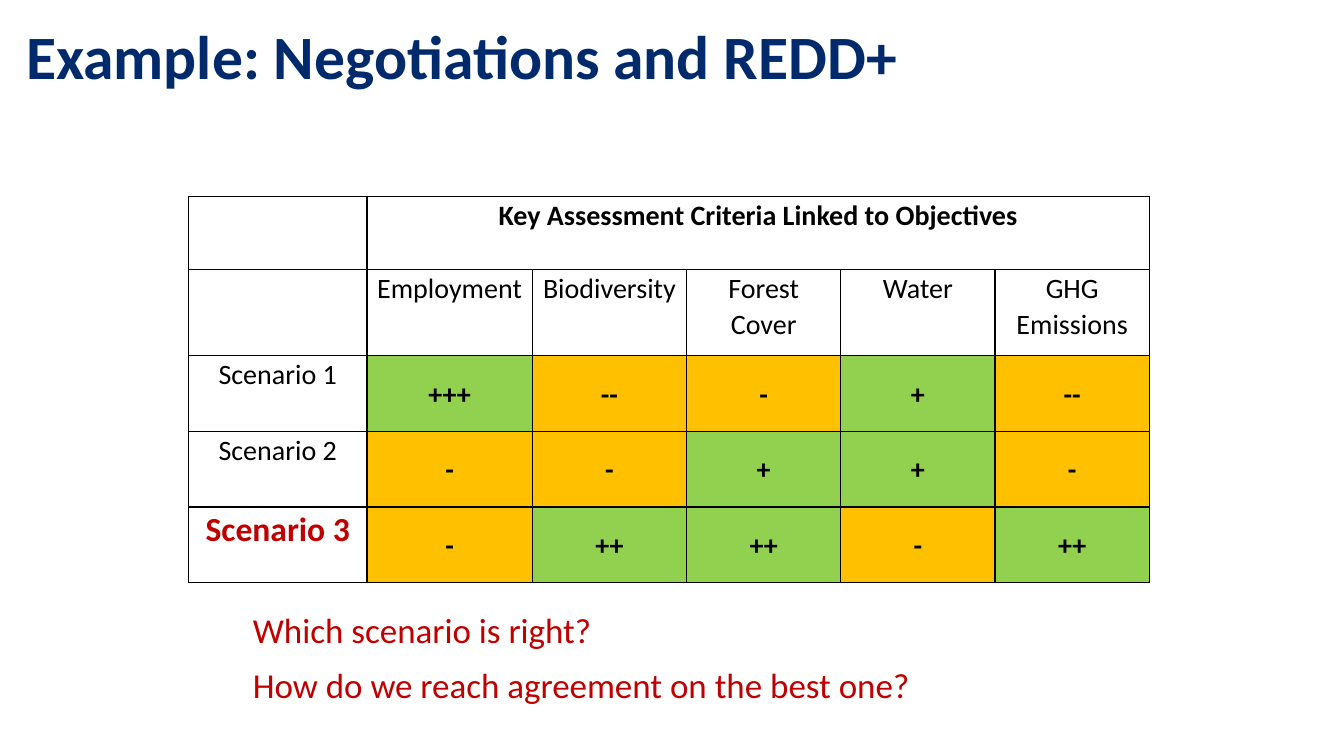
from lxml import etree
from pptx import Presentation
from pptx.dml.color import RGBColor
from pptx.enum.text import MSO_ANCHOR, PP_ALIGN
from pptx.oxml.ns import qn
from pptx.util import Inches, Pt

NAVY = RGBColor(0x00, 0x2A, 0x6C)
RED = RGBColor(0xC0, 0x00, 0x00)
BLACK = RGBColor(0x00, 0x00, 0x00)
GREEN = RGBColor(0x92, 0xD0, 0x50)
AMBER = RGBColor(0xFF, 0xC0, 0x00)
TOP, MIDDLE = MSO_ANCHOR.TOP, MSO_ANCHOR.MIDDLE
CENTER = PP_ALIGN.CENTER


def add_run(p, text, size, color, bold=False):
    r = p.add_run()
    r.text = text
    r.font.name = "Calibri"
    r.font.size = Pt(size)
    r.font.bold = bold
    r.font.color.rgb = color


def add_borders(cell):
    tcPr = cell._tc.get_or_add_tcPr()
    for side in ("a:lnL", "a:lnR", "a:lnT", "a:lnB"):
        ln = etree.SubElement(tcPr, qn(side), w=str(Pt(1)))
        fill = etree.SubElement(ln, qn("a:solidFill"))
        etree.SubElement(fill, qn("a:srgbClr"), val=str(BLACK))


prs = Presentation()
prs.slide_width = Inches(13.33)
prs.slide_height = Inches(7.5)
s = prs.slides.add_slide(prs.slide_layouts[6])

# Title
tf = s.shapes.add_textbox(Inches(0.16), Inches(0), Inches(12.99), Inches(1.18)).text_frame
tf.word_wrap = True
tf.vertical_anchor = MIDDLE
p = tf.paragraphs[0]
p.line_spacing = 0.9
add_run(p, "Example: Negotiations and REDD+", 44, NAVY, True)

# Scenario table
rows = [
    ["", "Key Assessment Criteria Linked to Objectives", "", "", "", ""],
    ["", "Employment", "Biodiversity", "Forest Cover", "Water", "GHG Emissions"],
    ["Scenario 1", "+++", "--", "-", "+", "--"],
    ["Scenario 2", "-", "-", "+", "+", "-"],
    ["Scenario 3", "-", "++", "++", "-", "++"],
]
col_widths = [1.77, 1.64] + [1.53] * 4
row_heights = [0.72, 0.86] + [0.75] * 3
table = s.shapes.add_table(len(rows), len(col_widths), Inches(1.87), Inches(1.95),
                           Inches(sum(col_widths)), Inches(sum(row_heights))).table
table.first_row = False
table.horz_banding = False
for col, width in zip(table.columns, col_widths):
    col.width = Inches(width)
for row, height in zip(table.rows, row_heights):
    row.height = Inches(height)
table.cell(0, 1).merge(table.cell(0, 5))

for i, row in enumerate(rows):
    for j, text in enumerate(row):
        cell = table.cell(i, j)
        is_rating = i > 1 and j > 0
        cell.margin_left = cell.margin_right = Inches(0.07)
        cell.margin_top = cell.margin_bottom = Inches(0)
        cell.vertical_anchor = MIDDLE if is_rating else TOP
        add_borders(cell)
        if is_rating:
            cell.fill.solid()
            cell.fill.fore_color.rgb = GREEN if "+" in text else AMBER
        else:
            cell.fill.background()
        if text:
            p = cell.text_frame.paragraphs[0]
            p.alignment = CENTER
            p.line_spacing = 1.07
            chosen = text == "Scenario 3"
            add_run(p, text, 24 if chosen else 20, RED if chosen else BLACK,
                    is_rating or chosen or i == 0)

# Closing questions
tf = s.shapes.add_textbox(Inches(2.41), Inches(5.95), Inches(8.42), Inches(1.1)).text_frame
tf.word_wrap = True
questions = ["Which scenario is right?", "How do we reach agreement on the best one?"]
for i, question in enumerate(questions):
    p = tf.add_paragraph() if i else tf.paragraphs[0]
    p.line_spacing = 1.1
    p.space_before = Pt(3 if i else 0)
    p.space_after = Pt(3)
    add_run(p, question, 25, RED)

prs.save("out.pptx")
